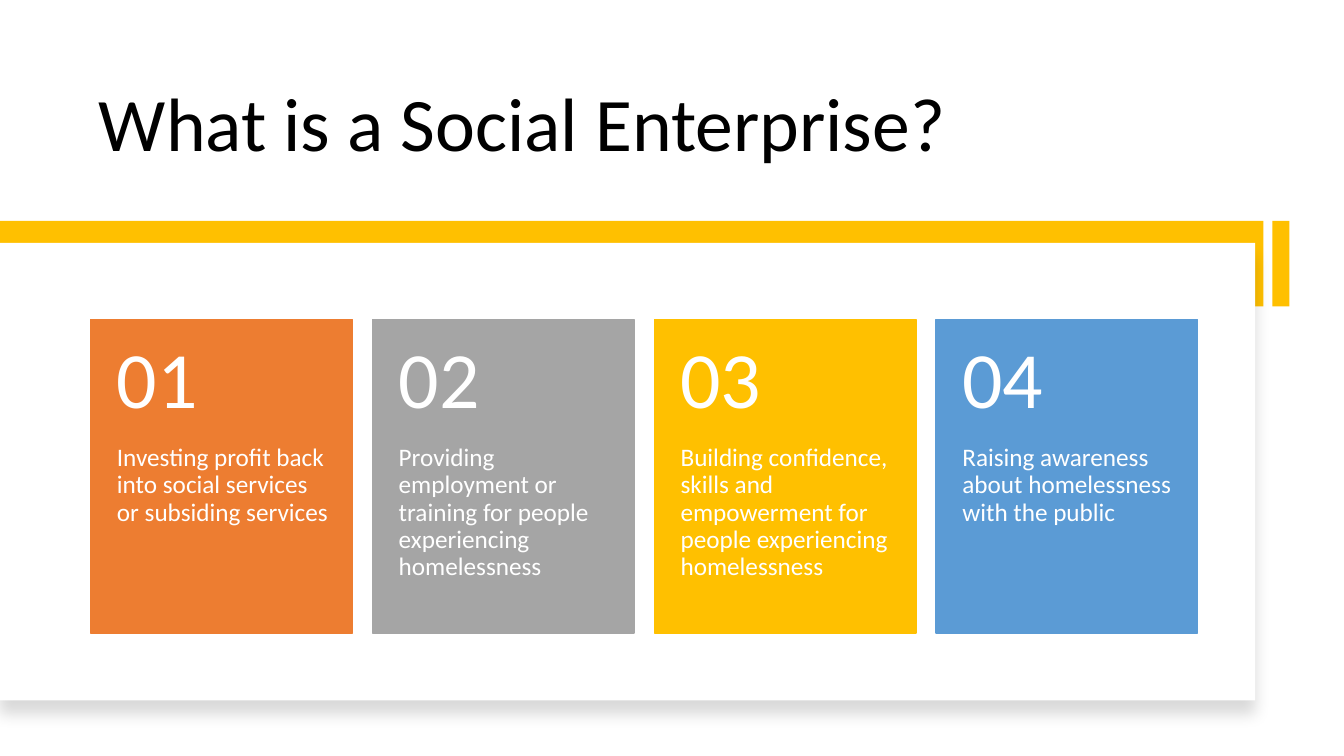
from lxml.etree import SubElement
from pptx import Presentation
from pptx.dml.color import RGBColor
from pptx.enum.shapes import MSO_SHAPE as Shape
from pptx.enum.text import MSO_ANCHOR as Anchor, MSO_AUTO_SIZE as Fit, PP_ALIGN as Align
from pptx.oxml.ns import qn
from pptx.util import Inches, Pt

GOLD, WHITE, BLACK = "FFC000", "FFFFFF", "000000"
CARDS = [
    ("ED7D31", "Investing profit back into social services or subsiding services"),
    ("A5A5A5", "Providing employment or training for people experiencing homelessness"),
    (GOLD, "Building confidence, skills and empowerment for people experiencing homelessness"),
    ("5B9BD5", "Raising awareness about homelessness with the public"),
]


def color(code):
    return RGBColor.from_string(code)


def add_rect(slide, box, fill, edge=False):
    rect = slide.shapes.add_shape(Shape.RECTANGLE, *map(Inches, box))
    rect.shadow.inherit = False
    rect.fill.solid()
    rect.fill.fore_color.rgb = color(fill)
    if edge:
        rect.line.color.rgb = color(fill)
        rect.line.width = Pt(1)
    else:
        rect.line.fill.background()
    return rect


def set_text(shape, text, size, ink, anchor):
    frame = shape.text_frame
    frame.text = text
    frame.word_wrap = True
    frame.auto_size = Fit.NONE
    frame.vertical_anchor = anchor
    para = frame.paragraphs[0]
    para.alignment = Align.LEFT
    para.line_spacing = 0.9
    para.font.name = "Calibri"
    para.font.size = Pt(size)
    para.font.color.rgb = color(ink)
    return frame


def add_label(slide, box, text, size, anchor, top, bottom):
    label = slide.shapes.add_textbox(*map(Inches, box))
    frame = set_text(label, text, size, WHITE, anchor)
    frame.margin_left, frame.margin_right = Inches(0.26), Inches(0.23)
    frame.margin_top, frame.margin_bottom = Inches(top), Inches(bottom)


def add_title(slide, box, text):
    title = slide.shapes.title
    title.left, title.top, title.width, title.height = map(Inches, box)
    set_text(title, text, 54, BLACK, Anchor.BOTTOM)


def add_band(slide, box):
    """Draw the gold bar and the short tab that ends it on the right."""
    left, top, width, height = box
    tab = 0.17
    add_rect(slide, (left + width - tab, top, tab, height), GOLD)
    add_rect(slide, (left, top, width - tab - 0.09, height), GOLD)


def add_panel(slide, box):
    """Draw the white panel with a soft shadow below it."""
    panel = add_rect(slide, box, WHITE)
    effects = panel.element.spPr.find(qn("a:effectLst"))
    shade = SubElement(effects, qn("a:outerShdw"), blurRad=str(Pt(11)),
                       dist=str(Pt(10)), dir="5400000", algn="t", rotWithShape="0")
    tint = SubElement(shade, qn("a:srgbClr"), val=BLACK)
    SubElement(tint, qn("a:alpha"), val="15000")


def add_card(slide, box, number, fill, text):
    left, top, width, height = box
    head = height * 0.4
    add_rect(slide, box, fill, edge=True)
    add_label(slide, (left, top + head, width, height - head), text, 18, Anchor.TOP, 0, 0.36)
    add_label(slide, (left, top, width, head), f"{number:02}", 57, Anchor.MIDDLE, 0.18, 0.18)


def add_cards(slide, box, gap=0.2):
    left, top, width, height = box
    wide = (width - gap * (len(CARDS) - 1)) / len(CARDS)
    for index, (fill, text) in enumerate(CARDS):
        place = (left + index * (wide + gap), top, wide, height)
        add_card(slide, place, index + 1, fill, text)


def main():
    deck = Presentation()
    deck.slide_width, deck.slide_height = Inches(13.33), Inches(7.5)
    slide = deck.slides.add_slide(deck.slide_layouts.get_by_name("Title Only"))
    add_title(slide, (0.88, 0.42, 10.1, 1.3), "What is a Social Enterprise?")
    add_band(slide, (0, 2.19, 12.79, 0.85))
    add_panel(slide, (0, 2.41, 12.45, 4.54))
    add_cards(slide, (0.9, 3.17, 10.98, 3.11))
    deck.save("out.pptx")


if __name__ == "__main__":
    main()
